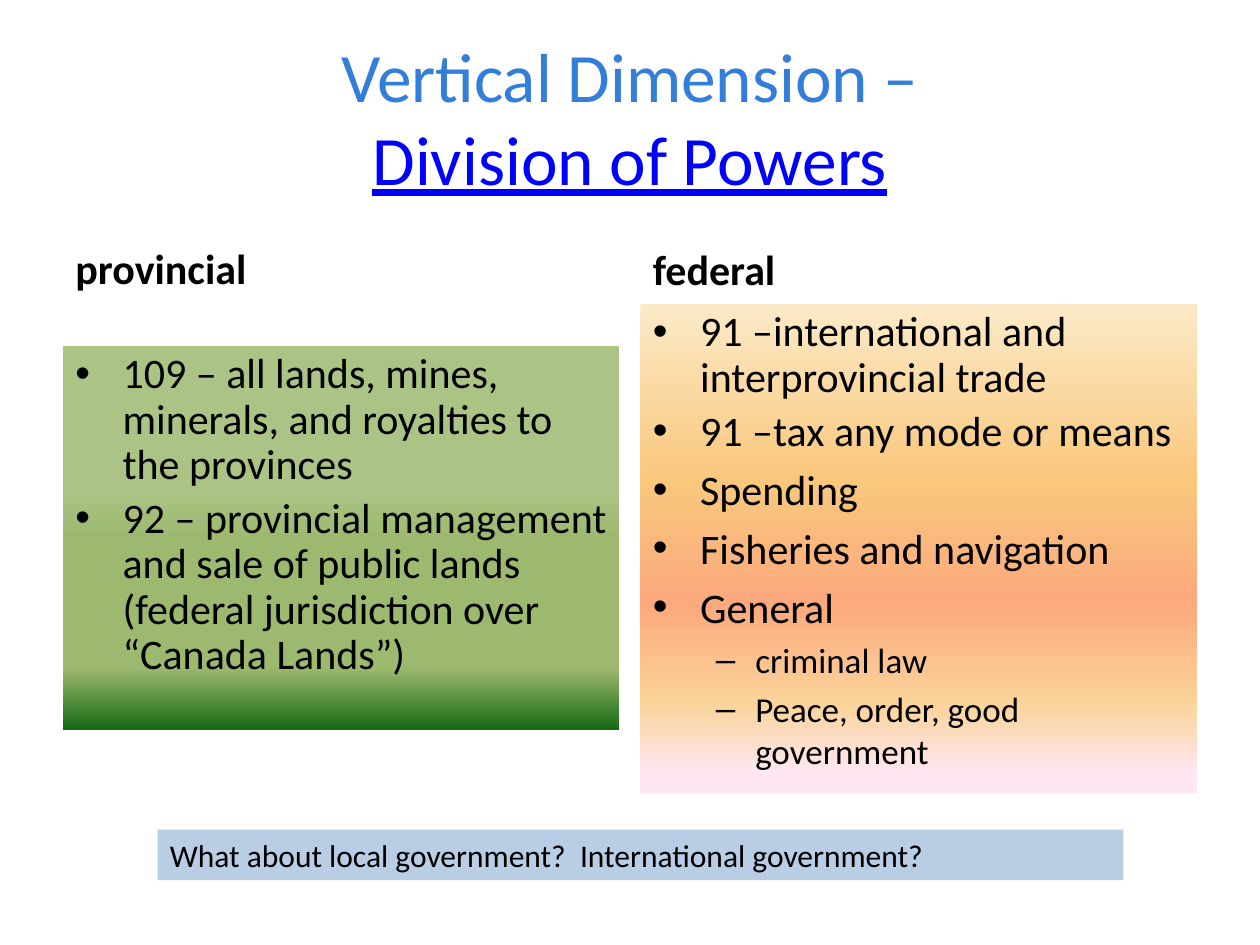
"""Builds the slide on the division of powers between provinces and federation."""
from lxml.etree import SubElement
from pptx import Presentation
from pptx.dml.color import RGBColor
from pptx.enum.shapes import MSO_SHAPE
from pptx.enum.text import MSO_ANCHOR, PP_ALIGN
from pptx.oxml.ns import qn
from pptx.util import Pt

BLACK = RGBColor(0x00, 0x00, 0x00)
TITLE_BLUE = RGBColor(0x33, 0x7E, 0xD9)
LINK_BLUE = RGBColor(0x00, 0x00, 0xFF)
PALE_BLUE = RGBColor(0xB9, 0xCD, 0xE5)
PROVINCIAL_STOPS = [
    (38, RGBColor(0xAB, 0xC4, 0x85)),
    (44, RGBColor(0xA4, 0xBE, 0x7A)),
    (47, RGBColor(0xA0, 0xBB, 0x74)),
    (50, RGBColor(0x9D, 0xB9, 0x6F)),
    (84, RGBColor(0x9C, 0xB8, 0x6E)),
    (100, RGBColor(0x15, 0x6B, 0x13)),
]
FEDERAL_STOPS = [
    (0, RGBColor(0xFB, 0xEA, 0xC7)),
    (36, RGBColor(0xFA, 0xC7, 0x7D)),
    (61, RGBColor(0xFB, 0xA9, 0x7D)),
    (82, RGBColor(0xFB, 0xD4, 0x9C)),
    (96, RGBColor(0xFE, 0xE7, 0xF2)),
    (100, RGBColor(0xFE, 0xE7, 0xF2)),
]
BULLETS = [("•", 24, 27, 27), ("–", 20, 58.5, 22.5)]
LEFT, RIGHT, COLUMN_WIDTH = 36, 366, 318


class PowersSlide:
    """Holds the slide, its font and a method for each kind of element."""

    font = "Calibri"

    def __init__(self, slide):
        self.slide = slide

    def add_text(self, paragraph, text, size, color=BLACK, bold=False, underline=False):
        """Adds one styled run to a paragraph."""
        run = paragraph.add_run()
        run.text = text
        run.font.name = self.font
        run.font.size = Pt(size)
        run.font.color.rgb = color
        run.font.bold = bold
        run.font.underline = underline

    def text_area(self, left, top, width, height, anchor):
        """Adds a wrapping text box and returns its first paragraph."""
        area = self.slide.shapes.add_textbox(Pt(left), Pt(top), Pt(width), Pt(height))
        area.text_frame.word_wrap = True
        area.text_frame.vertical_anchor = anchor
        return area.text_frame.paragraphs[0]

    def title(self, first_line, second_line):
        """Adds the centred title in two colours."""
        paragraph = self.text_area(LEFT, 21.6, 648, 90, MSO_ANCHOR.MIDDLE)
        paragraph.alignment = PP_ALIGN.CENTER
        self.add_text(paragraph, first_line, 39.6, TITLE_BLUE)
        paragraph.add_line_break()
        self.add_text(paragraph, second_line, 39.6, LINK_BLUE, underline=True)

    def heading(self, left, text, spacing=1.0):
        """Adds a bold column heading."""
        paragraph = self.text_area(left, 121, COLUMN_WIDTH, 50.4, MSO_ANCHOR.BOTTOM)
        paragraph.line_spacing = spacing
        self.add_text(paragraph, text, 24, bold=True)

    def panel(self, left, top, width, height):
        """Adds a plain rectangle for left-aligned text."""
        panel = self.slide.shapes.add_shape(
            MSO_SHAPE.RECTANGLE, Pt(left), Pt(top), Pt(width), Pt(height))
        panel.shadow.inherit = False
        panel.line.fill.background()
        panel.text_frame.word_wrap = True
        panel.text_frame.vertical_anchor = MSO_ANCHOR.TOP
        panel.text_frame.paragraphs[0].alignment = PP_ALIGN.LEFT
        return panel

    def shade(self, panel, stops):
        """Fills a panel with a gradient running downwards."""
        panel.fill.gradient()
        panel.fill.gradient_angle = 270
        stop_list = next(panel.element.spPr.iter(qn("a:gsLst")))
        for old_stop in list(stop_list):
            stop_list.remove(old_stop)
        for percent, color in stops:
            stop = SubElement(stop_list, qn("a:gs"), pos=str(percent * 1000))
            SubElement(stop, qn("a:srgbClr"), val=str(color))

    def bullet_panel(self, left, top, height, stops, items):
        """Adds a gradient panel of (level, line spacing, text) bullets."""
        panel = self.panel(left, top, COLUMN_WIDTH, height)
        self.shade(panel, stops)
        frame = panel.text_frame
        for index, (level, spacing, text) in enumerate(items):
            paragraph = frame.add_paragraph() if index else frame.paragraphs[0]
            mark, size, margin, hanging = BULLETS[level]
            properties = paragraph._p.get_or_add_pPr()
            properties.set("marL", str(int(Pt(margin))))
            properties.set("indent", str(-int(Pt(hanging))))
            SubElement(properties, qn("a:buFont"), typeface="Arial")
            SubElement(properties, qn("a:buChar"), char=mark)
            paragraph.level = level
            paragraph.alignment = PP_ALIGN.LEFT
            paragraph.line_spacing = spacing
            if index:
                paragraph.space_before = Pt(size * 0.2)
            self.add_text(paragraph, text, size)

    def question(self, text):
        """Adds the closing question bar."""
        bar = self.panel(90, 474, 552, 29)
        bar.fill.solid()
        bar.fill.fore_color.rgb = PALE_BLUE
        self.add_text(bar.text_frame.paragraphs[0], text, 18)


def main():
    """Builds and saves the presentation."""
    presentation = Presentation()
    presentation.slide_width, presentation.slide_height = Pt(720), Pt(540)
    powers = PowersSlide(presentation.slides.add_slide(presentation.slide_layouts[6]))
    powers.title("Vertical Dimension –", "Division of Powers")
    powers.heading(LEFT, "provincial", 0.9)
    powers.bullet_panel(LEFT, 198, 219, PROVINCIAL_STOPS, [
        (0, 0.9, "109 – all lands, mines, minerals, and royalties to the provinces"),
        (0, 0.9, "92 – provincial management and sale of public lands "
                 "(federal jurisdiction over “Canada Lands”)"),
    ])
    powers.heading(RIGHT, "federal")
    powers.bullet_panel(RIGHT, 174, 279, FEDERAL_STOPS, [
        (0, 0.9, "91 –international and interprovincial trade"),
        (0, 0.9, "91 –tax any mode or means"),
        (0, 1.0, "Spending"),
        (0, 1.0, "Fisheries and navigation"),
        (0, 1.0, "General"),
        (1, 1.0, "criminal law"),
        (1, 1.0, "Peace, order, good government"),
    ])
    powers.question("What about local government?  International government?")
    presentation.save("out.pptx")


if __name__ == "__main__":
    main()
